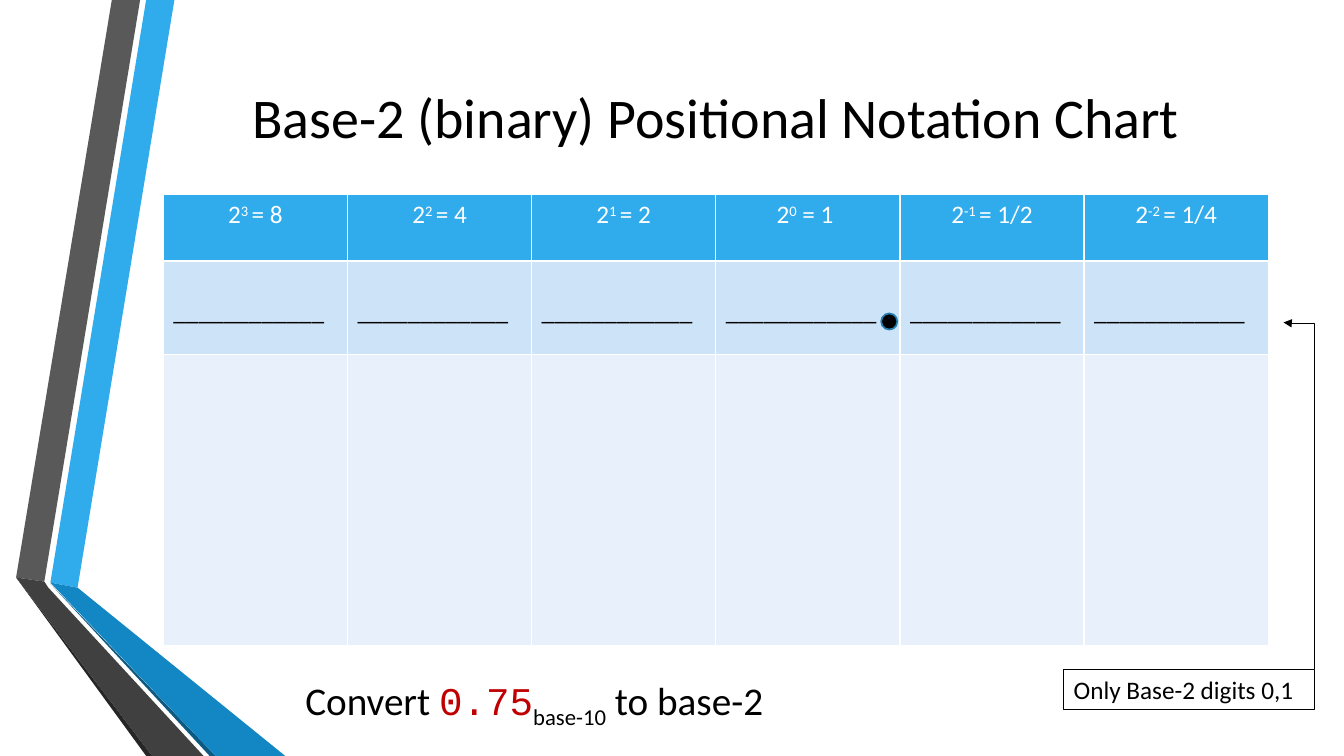
from dataclasses import dataclass

import lxml.etree
import pptx
import pptx.dml.color
import pptx.enum.shapes
import pptx.enum.text
import pptx.oxml
import pptx.oxml.ns
import pptx.util

Inches = pptx.util.Inches
Pt = pptx.util.Pt
RGBColor = pptx.dml.color.RGBColor
qn = pptx.oxml.ns.qn

BLACK = RGBColor(0x00, 0x00, 0x00)
WHITE = RGBColor(0xFF, 0xFF, 0xFF)
RED = RGBColor(0xC0, 0x00, 0x00)
BLUE = RGBColor(0x30, 0xAC, 0xEC)
MIDDLE_BLUE = RGBColor(0x12, 0x87, 0xC3)
DARK_BLUE = RGBColor(0x0C, 0x5A, 0x82)
DOT_BLUE = RGBColor(0x24, 0x7F, 0xAF)
GRAY = RGBColor(0x59, 0x59, 0x59)
DARK_GRAY = RGBColor(0x40, 0x40, 0x40)
SHADE_GRAY = RGBColor(0x26, 0x26, 0x26)
DIGIT_ROW_BLUE = RGBColor(0xCD, 0xE3, 0xF8)
WORK_ROW_BLUE = RGBColor(0xE8, 0xF1, 0xFB)


@dataclass(frozen=True)
class Ribbon:
    color: RGBColor
    points: tuple[tuple[float, float], ...]


@dataclass(frozen=True)
class TextPart:
    text: str
    color: RGBColor = BLACK
    font: str = "Calibri"
    baseline: int = 0


@dataclass(frozen=True)
class PlaceValue:
    exponent: str
    value: str


RIBBONS = (
    Ribbon(BLUE, ((0.5, 5.78), (0.77, 5.83), (1.73, 0), (1.45, 0))),
    Ribbon(GRAY, ((1.39, 0), (1.11, 0), (0.16, 5.73), (0.44, 5.77))),
    Ribbon(SHADE_GRAY, ((0.16, 5.73), (1.45, 7.5), (1.51, 7.5))),
    Ribbon(DARK_BLUE, ((0.5, 5.79), (2.08, 7.5), (2.14, 7.5))),
    Ribbon(MIDDLE_BLUE, ((0.5, 5.78), (2.14, 7.5), (2.83, 7.5), (0.77, 5.83))),
    Ribbon(DARK_GRAY, ((2.02, 7.5), (0.48, 5.83), (0.44, 5.77), (0.16, 5.73), (1.51, 7.5))),
)
PLACE_VALUES = (
    PlaceValue("3 ", "= 8"),
    PlaceValue("2 ", "= 4"),
    PlaceValue("1 ", "= 2"),
    PlaceValue("0", " = 1 "),
    PlaceValue("-1 ", "= 1/2"),
    PlaceValue("-2 ", "= 1/4"),
)
CHART_LEFT, CHART_TOP, CHART_WIDTH = 1.62, 1.93, 10.96
ROW_HEIGHTS = (0.66, 0.93, 2.89)
ROW_COLORS = (BLUE, DIGIT_ROW_BLUE, WORK_ROW_BLUE)


def add_ribbon(slide, ribbon: Ribbon) -> None:
    corners = [(Inches(x), Inches(y)) for x, y in ribbon.points]
    builder = slide.shapes.build_freeform(*corners[0])
    builder.add_line_segments(corners[1:], close=True)
    shape = builder.convert_to_shape()
    shape.shadow.inherit = False
    shape.fill.solid()
    shape.fill.fore_color.rgb = ribbon.color
    shape.line.fill.background()


def add_parts(paragraph, parts: tuple[TextPart, ...], size: float) -> None:
    for part in parts:
        run = paragraph.add_run()
        run.text = part.text
        run.font.size = Pt(size)
        run.font.name = part.font
        run.font.bold = False
        run.font.color.rgb = part.color
        if part.baseline:
            run._r.get_or_add_rPr().set("baseline", str(part.baseline * 1000))


def set_borders(cell, color: RGBColor, width: float) -> None:
    properties = cell._tc.get_or_add_tcPr()
    for index, side in enumerate(("lnL", "lnR", "lnT", "lnB")):
        border = lxml.etree.Element(qn(f"a:{side}"), w=str(Pt(width)))
        fill = lxml.etree.SubElement(border, qn("a:solidFill"))
        lxml.etree.SubElement(fill, qn("a:srgbClr"), val=str(color))
        properties.insert(index, border)


def add_place_value_table(slide) -> None:
    table = slide.shapes.add_table(
        len(ROW_HEIGHTS), len(PLACE_VALUES), Inches(CHART_LEFT), Inches(CHART_TOP),
        Inches(CHART_WIDTH), Inches(sum(ROW_HEIGHTS))).table
    table.horz_banding = False
    for row, height, color in zip(table.rows, ROW_HEIGHTS, ROW_COLORS):
        row.height = Inches(height)
        for cell in row.cells:
            cell.fill.solid()
            cell.fill.fore_color.rgb = color
            set_borders(cell, WHITE, 1)
    for column, place in enumerate(PLACE_VALUES):
        header = table.cell(0, column).text_frame.paragraphs[0]
        header.alignment = pptx.enum.text.PP_ALIGN.CENTER
        add_parts(header, (TextPart("2", WHITE), TextPart(place.exponent, WHITE, baseline=30),
                           TextPart(place.value, WHITE)), 18)
        blank = table.cell(1, column)
        blank.margin_top = Inches(0.35)
        add_parts(blank.text_frame.paragraphs[0], (TextPart("_" * 12),), 18)


def add_radix_point(slide) -> None:
    dot = slide.shapes.add_shape(
        pptx.enum.shapes.MSO_SHAPE.OVAL, Inches(8.74), Inches(3.11), Inches(0.16), Inches(0.16))
    dot.shadow.inherit = False
    dot.fill.solid()
    dot.fill.fore_color.rgb = BLACK
    dot.line.color.rgb = DOT_BLUE
    dot.line.width = Pt(1.25)


def add_text_box(slide, left: float, top: float, width: float, height: float,
                 parts: tuple[TextPart, ...], size: float):
    box = slide.shapes.add_textbox(Inches(left), Inches(top), Inches(width), Inches(height))
    box.text_frame.word_wrap = True
    add_parts(box.text_frame.paragraphs[0], parts, size)
    return box


def add_elbow_arrow(slide, begin: tuple[float, float], end: tuple[float, float]) -> None:
    center_x, center_y = (begin[0] + end[0]) / 2, (begin[1] + end[1]) / 2
    rise, run = begin[1] - end[1], begin[0] - end[0]
    arrow = slide.shapes.add_connector(
        pptx.enum.shapes.MSO_CONNECTOR.ELBOW,
        Inches(center_x - rise / 2), Inches(center_y - run / 2),
        Inches(center_x + rise / 2), Inches(center_y + run / 2))
    arrow.line.color.rgb = BLACK
    arrow.line.width = Pt(0.75)
    properties = arrow._element.spPr
    transform = properties.find(qn("a:xfrm"))
    transform.set("rot", str(270 * 60000))
    transform.set("flipV", "1")
    adjustments = properties.find(qn("a:prstGeom")).find(qn("a:avLst"))
    lxml.etree.SubElement(adjustments, qn("a:gd"), name="adj1", fmla="val 99800")
    lxml.etree.SubElement(properties.find(qn("a:ln")), qn("a:tailEnd"), type="triangle",
                          w="med", len="med")
    lxml.etree.SubElement(properties, qn("a:effectLst"))


def add_title(slide, text: str) -> None:
    title = slide.shapes.title
    title.left, title.top = Inches(CHART_LEFT), Inches(0.75)
    title.width, title.height = Inches(CHART_WIDTH), Inches(0.8)
    title.text_frame.text = text
    title.text_frame.vertical_anchor = pptx.enum.text.MSO_ANCHOR.MIDDLE
    paragraph = title.text_frame.paragraphs[0]
    paragraph.alignment = pptx.enum.text.PP_ALIGN.CENTER
    font = paragraph.runs[0].font
    font.size = Pt(40)
    font.name = "Calibri"
    font.color.rgb = BLACK


def main() -> None:
    presentation = pptx.Presentation()
    presentation.slide_width = Inches(13.33)
    presentation.slide_height = Inches(7.5)
    slide = presentation.slides.add_slide(presentation.slide_layouts[5])
    for ribbon in RIBBONS:
        add_ribbon(slide, ribbon)
    add_title(slide, "Base-2 (binary) Positional Notation Chart")
    add_place_value_table(slide)
    add_radix_point(slide)
    note = add_text_box(slide, 10.55, 6.64, 2.49, 0.4, (TextPart("Only Base-2 digits 0,1"),), 18)
    note.line.color.rgb = BLACK
    note.line.width = Pt(0.75)
    add_elbow_arrow(slide, (13.04, 6.64), (12.73, 3.2))
    add_text_box(slide, 2.93, 6.66, 5.51, 0.57, (
        TextPart("Convert "), TextPart("0.75", RED, "Courier New"),
        TextPart("base-10", baseline=-25), TextPart(" to base-2")), 28)
    presentation.save("out.pptx")


if __name__ == "__main__":
    main()
